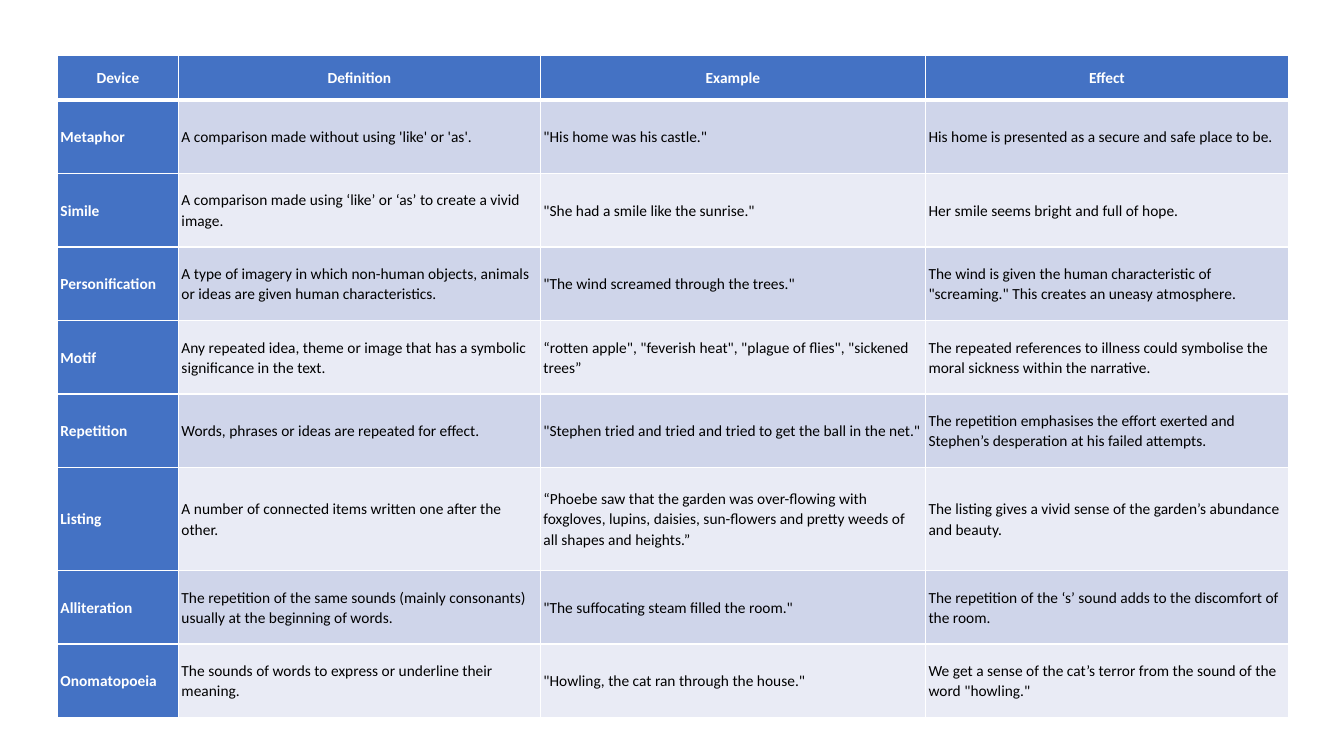
import dataclasses

import lxml.etree
import pptx
import pptx.dml.color
import pptx.enum.text
import pptx.oxml.ns
import pptx.util

Inches = pptx.util.Inches
Pt = pptx.util.Pt
ALIGN = pptx.enum.text.PP_ALIGN


@dataclasses.dataclass
class Theme:
    font: str = "Calibri"
    size: int = 11
    head: str = "4472C4"
    bands: tuple = ("CFD5EA", "E9EBF5")
    light: str = "FFFFFF"
    dark: str = "000000"
    rule: int = 1
    thick: int = 3
    inset: float = 0.03
    lead: float = 1.07
    after: int = 12


class Sheet:
    def __init__(self, slide, theme):
        self.slide = slide
        self.theme = theme

    def border(self, cell, side, width):
        """Draw one edge of a cell; call before the cell is filled."""
        qn = pptx.oxml.ns.qn
        props = cell._tc.get_or_add_tcPr()
        line = lxml.etree.SubElement(props, qn(f"a:ln{side}"), w=str(Pt(width)))
        fill = lxml.etree.SubElement(line, qn("a:solidFill"))
        lxml.etree.SubElement(fill, qn("a:srgbClr"), val=self.theme.light)

    def cell(self, cell, text, row, col):
        theme = self.theme
        head = row == 0 or col == 0

        # Edges: a thick rule parts the header from the body
        for side in "LRTB":
            heavy = (row, side) in ((0, "B"), (1, "T"))
            self.border(cell, side, theme.thick if heavy else theme.rule)

        # Fill: solid header and first column, banded body
        shade = theme.head if head else theme.bands[(row - 1) % 2]
        cell.fill.solid()
        cell.fill.fore_color.rgb = pptx.dml.color.RGBColor.from_string(shade)

        # Text
        edge = Inches(theme.inset)
        cell.margin_left = cell.margin_right = edge
        cell.margin_top = cell.margin_bottom = edge
        cell.vertical_anchor = pptx.enum.text.MSO_ANCHOR.MIDDLE
        cell.text_frame.text = text
        para = cell.text_frame.paragraphs[0]
        para.alignment = ALIGN.CENTER if row == 0 else ALIGN.LEFT
        para.line_spacing = theme.lead
        para.space_after = Pt(theme.after)
        font = para.runs[0].font
        font.name = theme.font
        font.size = Pt(theme.size)
        font.bold = head
        ink = theme.light if head else theme.dark
        font.color.rgb = pptx.dml.color.RGBColor.from_string(ink)

    def table(self, left, top, widths, heights, data):
        frame = self.slide.shapes.add_table(
            len(heights), len(widths), Inches(left), Inches(top),
            Inches(sum(widths)), Inches(sum(heights)))
        grid = frame.table
        for col, width in zip(grid.columns, widths):
            col.width = Inches(width)
        for row, height in zip(grid.rows, heights):
            row.height = Inches(height)
        for r, texts in enumerate(data):
            for c, text in enumerate(texts):
                self.cell(grid.cell(r, c), text, r, c)


DATA = [
    ("Device", "Definition", "Example", "Effect"),
    ("Metaphor",
     "A comparison made without using 'like' or 'as'.",
     '"His home was his castle."',
     "His home is presented as a secure and safe place to be."),
    ("Simile",
     "A comparison made using ‘like’ or ‘as’ to create a vivid image.",
     '"She had a smile like the sunrise."',
     "Her smile seems bright and full of hope."),
    ("Personification",
     "A type of imagery in which non-human objects, animals or ideas "
     "are given human characteristics.",
     '"The wind screamed through the trees."',
     'The wind is given the human characteristic of "screaming." '
     "This creates an uneasy atmosphere."),
    ("Motif",
     "Any repeated idea, theme or image that has a symbolic "
     "significance in the text.",
     '“rotten apple", "feverish heat", "plague of flies", "sickened trees”',
     "The repeated references to illness could symbolise the moral "
     "sickness within the narrative."),
    ("Repetition",
     "Words, phrases or ideas are repeated for effect.",
     '"Stephen tried and tried and tried to get the ball in the net."',
     "The repetition emphasises the effort exerted and Stephen’s "
     "desperation at his failed attempts."),
    ("Listing",
     "A number of connected items written one after the other.",
     "“Phoebe saw that the garden was over-flowing with foxgloves, lupins, "
     "daisies, sun-flowers and pretty weeds of all shapes and heights.”",
     "The listing gives a vivid sense of the garden’s abundance and beauty."),
    ("Alliteration",
     "The repetition of the same sounds (mainly consonants) usually "
     "at the beginning of words.",
     '"The suffocating steam filled the room."',
     "The repetition of the ‘s’ sound adds to the discomfort of the room."),
    ("Onomatopoeia",
     "The sounds of words to express or underline their meaning.",
     '"Howling, the cat ran through the house."',
     "We get a sense of the cat’s terror from the sound of the word "
     '"howling."'),
]


def main():
    deck = pptx.Presentation()
    deck.slide_width = Inches(13.33)
    deck.slide_height = Inches(7.5)
    sheet = Sheet(deck.slides.add_slide(deck.slide_layouts[6]), Theme())

    # Table of literary devices; the listing row is taller
    heights = [0.44] + [0.73] * 5 + [1.02] + [0.73] * 2
    sheet.table(0.57, 0.55, [1.2, 3.59, 3.82, 3.6], heights, DATA)

    deck.save("out.pptx")


if __name__ == "__main__":
    main()
